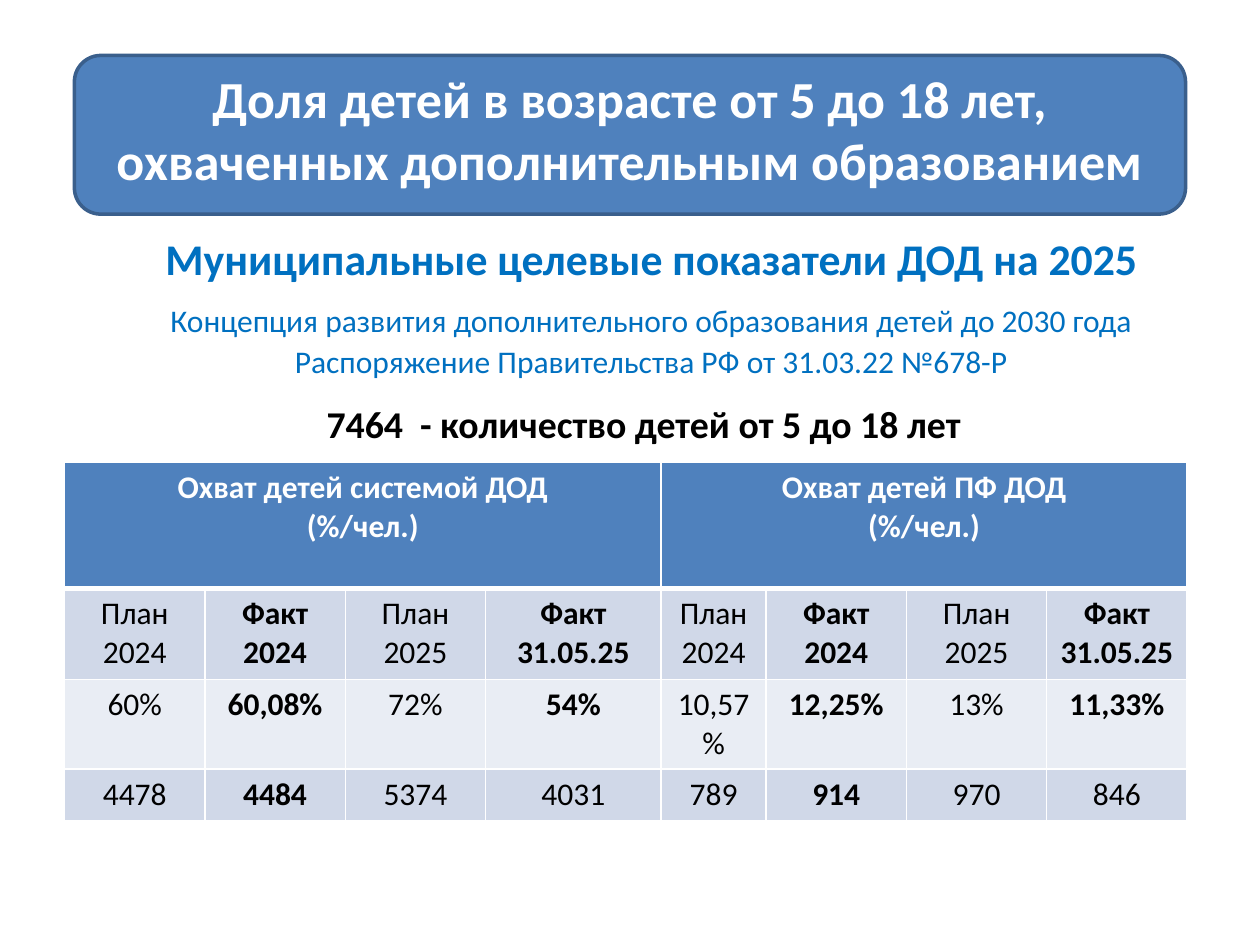
"""Build the slide on the share of children covered by additional education."""
from lxml import etree
from pptx import Presentation
from pptx.dml.color import RGBColor
from pptx.enum import shapes, text
from pptx.oxml import ns
from pptx.util import Pt


def color(value):
    return RGBColor.from_string(value)


def style(paragraph, size, value, bold=False):
    paragraph.alignment = text.PP_ALIGN.CENTER
    paragraph.font.name = "Calibri"
    paragraph.font.size = Pt(size)
    paragraph.font.bold = bold
    paragraph.font.color.rgb = color(value)


deck = Presentation()
deck.slide_width, deck.slide_height = Pt(720), Pt(540)
slide = deck.slides.add_slide(deck.slide_layouts[5])

banner = slide.shapes.add_shape(
    shapes.MSO_SHAPE.ROUNDED_RECTANGLE, Pt(42.5), Pt(31.7), Pt(635), Pt(90.7))
banner.shadow.inherit = False
banner.fill.solid()
banner.fill.fore_color.rgb = color("4F81BD")
banner.line.color.rgb = color("3A5F8C")
banner.line.width = Pt(2)

widths = [80.2, 80.2, 80.2, 100.3, 60, 80.2, 80.2, 80.2]
heights = [72, 52, 51, 29.2]
rows = [
    ["Охват детей системой ДОД\n(%/чел.)", "", "", "",
     "Охват детей ПФ ДОД\n(%/чел.)", "", "", ""],
    ["План\n2024", "Факт\n2024", "План\n2025", "Факт 31.05.25"] * 2,
    ["60%", "60,08%", "72%", "54%", "10,57%", "12,25%", "13%", "11,33%"],
    ["4478", "4484", "5374", "4031", "789", "914", "970", "846"],
]
row_fills = ["4F81BD", "D0D8E8", "E9EDF4", "D0D8E8"]
regular_facts = ["4031", "846"]

coverage = slide.shapes.add_table(
    len(rows), len(widths), Pt(36.9), Pt(264.4), Pt(sum(widths)), Pt(sum(heights))).table
for column, width in zip(coverage.columns, widths):
    column.width = Pt(width)
for row, height in zip(coverage.rows, heights):
    row.height = Pt(height)
for start in (0, 4):
    coverage.cell(0, start).merge(coverage.cell(0, start + 3))

for r, values in enumerate(rows):
    for c, value in enumerate(values):
        cell = coverage.cell(r, c)
        cell.fill.solid()
        cell.fill.fore_color.rgb = color(row_fills[r])
        properties = cell._tc.get_or_add_tcPr()
        for place, side in enumerate("LRTB"):
            heavy = (r, side) in [(0, "B"), (1, "T")]
            border = etree.Element(ns.qn(f"a:ln{side}"), w=str(Pt(3 if heavy else 1)))
            paint = etree.SubElement(border, ns.qn("a:solidFill"))
            etree.SubElement(paint, ns.qn("a:srgbClr"), val="FFFFFF")
            properties.insert(place, border)
        if value:
            cell.text = value
            bold = r == 0 or (c % 2 == 1 and value not in regular_facts)
            for paragraph in cell.text_frame.paragraphs:
                style(paragraph, 18, "000000" if r else "FFFFFF", bold)

targets = slide.shapes.add_textbox(Pt(48.2), Pt(128.9), Pt(648), Pt(90)).text_frame
targets.word_wrap = True
targets.text = "\n".join([
    "Муниципальные целевые показатели ДОД на 2025",
    "Концепция развития дополнительного образования детей до 2030 года",
    "Распоряжение Правительства РФ от 31.03.22 №678-Р",
])
for paragraph, size, gap in zip(targets.paragraphs, [25, 18, 18], [0, 9.5, 2]):
    style(paragraph, size, "0070C0", size == 25)
    paragraph.space_before = Pt(gap)

children = slide.shapes.add_textbox(Pt(177.8), Pt(225.4), Pt(380.2), Pt(33.1)).text_frame
children.word_wrap = False
children.text = "7464  - количество детей от 5 до 18 лет"
style(children.paragraphs[0], 21.6, "000000", True)

title = slide.shapes.title
title.left, title.top, title.width, title.height = Pt(36), Pt(32.4), Pt(648), Pt(90)
heading = title.text_frame
heading.text = "Доля детей в возрасте от 5 до 18 лет, охваченных дополнительным образованием"
heading.word_wrap = True
heading.auto_size = text.MSO_AUTO_SIZE.NONE
heading.vertical_anchor = text.MSO_ANCHOR.MIDDLE
heading.margin_bottom = Pt(11.6)
style(heading.paragraphs[0], 29.7, "FFFFFF", True)
slide.shapes.element.append(title.element)

deck.save("out.pptx")
